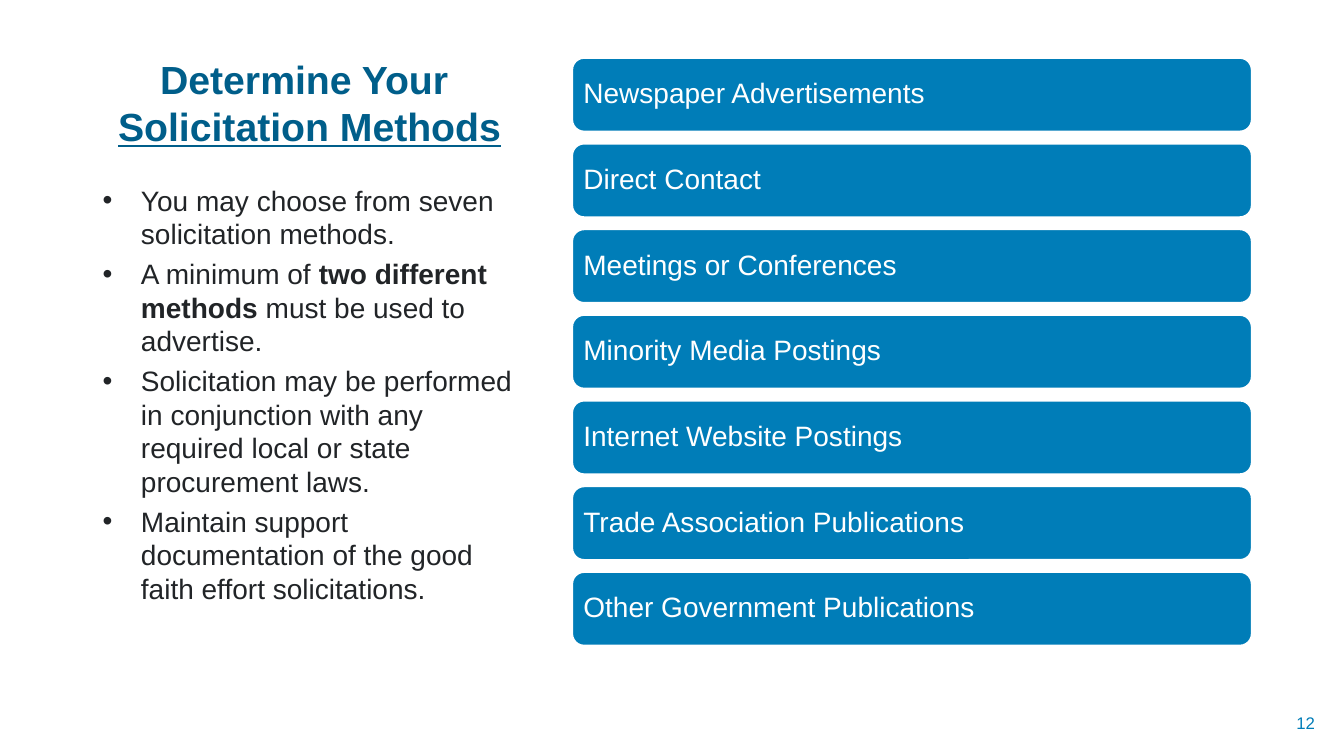
from dataclasses import dataclass

from lxml.etree import SubElement
from pptx import Presentation
from pptx.dml.color import RGBColor
from pptx.enum.shapes import MSO_SHAPE
from pptx.enum.text import MSO_ANCHOR, MSO_AUTO_SIZE, PP_ALIGN
from pptx.oxml.ns import qn
from pptx.util import Inches, Pt


@dataclass(frozen=True)
class Theme:
    font: str = "Arial"
    blue: str = "007DB8"
    navy: str = "005E8A"
    ink: str = "212427"
    white: str = "FFFFFF"
    title_size: int = 28
    body_size: int = 20
    number_size: int = 12


theme = Theme()


def write(para, text, size, color, bold=False, underline=False):
    span = para.add_run()
    span.text = text
    span.font.name = theme.font
    span.font.size = Pt(size)
    span.font.color.rgb = RGBColor.from_string(color)
    span.font.bold = bold
    span.font.underline = underline


def add_bullet(para):
    properties = para._p.get_or_add_pPr()
    properties.set("marL", str(Inches(0.38)))
    properties.set("indent", str(Inches(-0.38)))
    SubElement(properties, qn("a:buFont"), typeface=theme.font)
    SubElement(properties, qn("a:buChar"), char="•")


deck = Presentation()
deck.slide_width = Inches(13.33)
deck.slide_height = Inches(7.5)
page = deck.slides.add_slide(deck.slide_layouts[5])

title = page.shapes.title
title.left, title.top = Inches(0.92), Inches(0.5)
title.width, title.height = Inches(4.3), Inches(1.34)
title.text_frame.word_wrap = True
title.text_frame.auto_size = MSO_AUTO_SIZE.NONE
title.text_frame.vertical_anchor = MSO_ANCHOR.TOP
para = title.text_frame.paragraphs[0]
para.alignment = PP_ALIGN.CENTER
write(para, "Determine Your ", theme.title_size, theme.navy, bold=True)
para.add_line_break()
write(para, "Solicitation Methods", theme.title_size, theme.navy, bold=True, underline=True)

methods = [
    "Newspaper Advertisements",
    "Direct Contact",
    "Meetings or Conferences",
    "Minority Media Postings",
    "Internet Website Postings",
    "Trade Association Publications",
    "Other Government Publications",
]
for row, method in enumerate(methods):
    bar = page.shapes.add_shape(
        MSO_SHAPE.ROUNDED_RECTANGLE,
        Inches(5.67), Inches(0.57 + 0.85 * row), Inches(6.75), Inches(0.74),
    )
    bar.shadow.inherit = False
    bar.fill.solid()
    bar.fill.fore_color.rgb = RGBColor.from_string(theme.blue)
    bar.line.color.rgb = RGBColor.from_string(theme.white)
    bar.line.width = Pt(2)
    frame = bar.text_frame
    frame.word_wrap = True
    frame.vertical_anchor = MSO_ANCHOR.MIDDLE
    frame.margin_left = frame.margin_right = Inches(0.08)
    frame.margin_top = frame.margin_bottom = Inches(0.08)
    para = frame.paragraphs[0]
    para.alignment = PP_ALIGN.LEFT
    para.line_spacing = 0.9
    write(para, method, theme.body_size, theme.white)

guidance = [
    [("You may choose from seven solicitation methods.", False)],
    [
        ("A minimum of ", False),
        ("two different methods ", True),
        ("must be used to advertise.", False),
    ],
    [("Solicitation may be performed in conjunction with any "
      "required local or state procurement laws.", False)],
    [("Maintain support documentation of the good faith effort solicitations.", False)],
]
box = page.shapes.add_textbox(Inches(0.92), Inches(1.77), Inches(4.3), Inches(4.7))
frame = box.text_frame
frame.word_wrap = True
for index, spans in enumerate(guidance):
    para = frame.add_paragraph() if index else frame.paragraphs[0]
    add_bullet(para)
    if index:
        para.space_before = Pt(4.4)
    for text, bold in spans:
        write(para, text, theme.body_size, theme.ink, bold=bold)

number = page.shapes.add_textbox(Inches(10.42), Inches(7), Inches(2.72), Inches(0.35))
number.text_frame.word_wrap = True
number.text_frame.vertical_anchor = MSO_ANCHOR.MIDDLE
para = number.text_frame.paragraphs[0]
para.alignment = PP_ALIGN.RIGHT
write(para, "12", theme.number_size, theme.blue)

deck.save("out.pptx")
